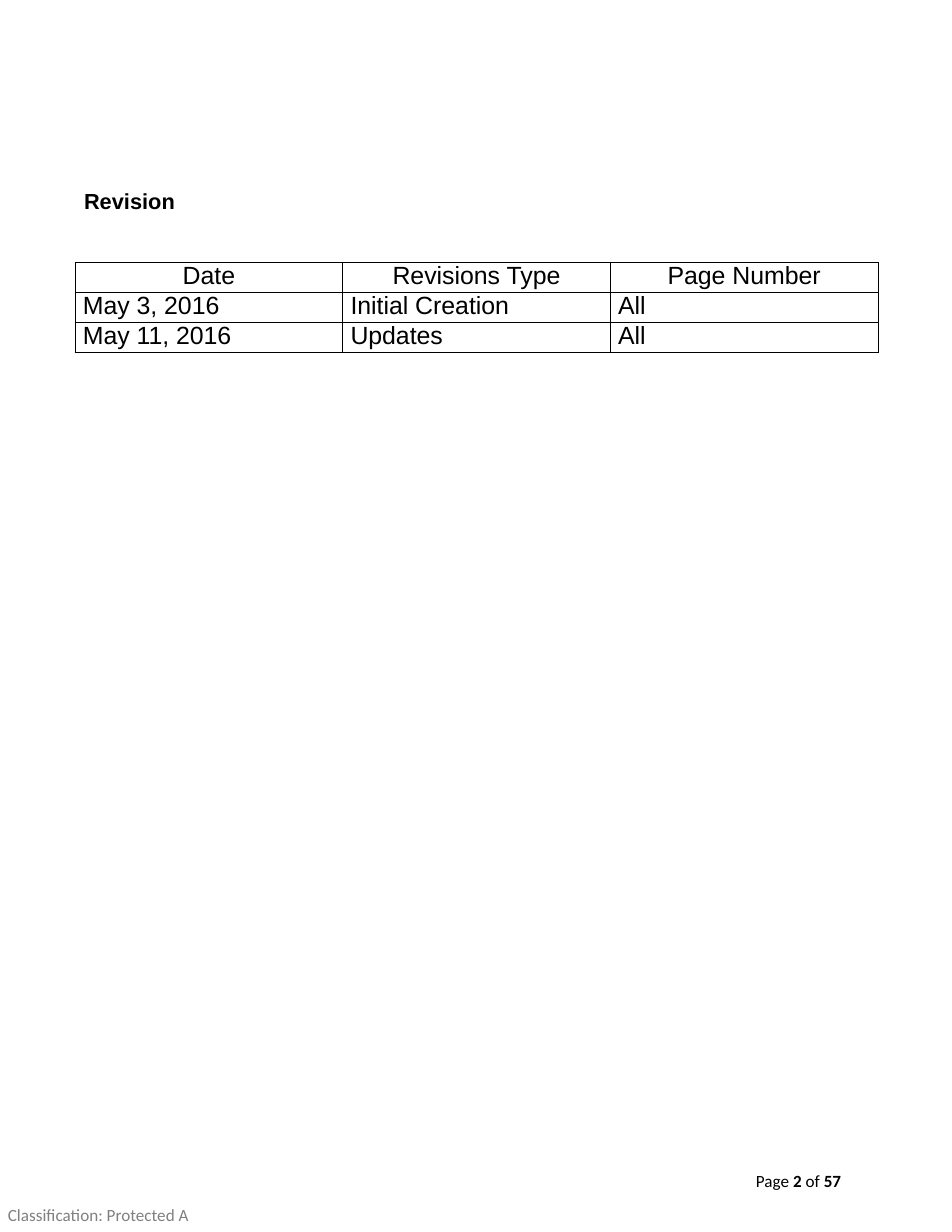
from lxml.etree import SubElement as Sub
from pptx import Presentation
from pptx.dml.color import RGBColor
from pptx.enum.text import MSO_ANCHOR as Anchor, MSO_AUTO_SIZE as Auto, PP_ALIGN as Align
from pptx.oxml.ns import qn
from pptx.util import Inches, Pt


def style(font, size, name, color="000000", bold=False):
    font.size = Pt(size)
    font.name = name
    font.bold = bold
    font.color.rgb = RGBColor.from_string(color)


def setup(box, left, top, width, height):
    box.left, box.top = Inches(left), Inches(top)
    box.width, box.height = Inches(width), Inches(height)
    frame = box.text_frame
    frame.margin_left = frame.margin_right = 0
    frame.margin_top = frame.margin_bottom = 0
    frame.vertical_anchor = Anchor.TOP
    frame.word_wrap = False
    frame.auto_size = Auto.NONE
    para = frame.paragraphs[0]
    para.alignment = Align.LEFT
    return para


deck = Presentation()
deck.slide_width, deck.slide_height = Inches(8.5), Inches(11)
slide = deck.slides.add_slide(deck.slide_layouts[5])
shapes = slide.shapes

title = setup(shapes.title, 0.75, 1.68, 0.84, 0.22)
title.text = "Revision"
style(title.font, 14, "Arial", bold=True)

label = setup(shapes.add_textbox(0, 0, 0, 0), 0.07, 10.75, 1.65, 0.18)
label.text = "Classification: Protected A"
style(label.font, 11, "Calibri", "808080")

page = setup(shapes.add_textbox(0, 0, 0, 0), 6.75, 10.45, 0.87, 0.18)
for text, bold in [("Page ", False), ("2", True), (" of ", False), ("57", True)]:
    run = page.add_run()
    run.text = text
    style(run.font, 11, "Calibri", bold=bold)

rows = [
    ("Date", "Revisions Type", "Page Number"),
    ("May 3, 2016", "Initial Creation", "All"),
    ("May 11, 2016", "Updates", "All"),
]
wide, high = 2.39, 0.27
table = shapes.add_table(
    len(rows), 3, Inches(0.67), Inches(2.34), Inches(3 * wide), Inches(len(rows) * high)
).table
for col in table.columns:
    col.width = Inches(wide)
for r, row in enumerate(rows):
    table.rows[r].height = Inches(high)
    for c, text in enumerate(row):
        cell = table.cell(r, c)
        cell.margin_left = Inches(0.07 if r else 0)
        cell.margin_right = cell.margin_top = cell.margin_bottom = 0
        para = cell.text_frame.paragraphs[0]
        para.text = text
        para.alignment = Align.LEFT if r else Align.CENTER
        style(para.font, 16, "Arial")
        props = cell._tc.get_or_add_tcPr()
        for side in ("a:lnL", "a:lnR", "a:lnT", "a:lnB"):
            line = Sub(props, qn(side), w=str(Pt(0.48)))
            Sub(Sub(line, qn("a:solidFill")), qn("a:srgbClr"), val="000000")
        cell.fill.background()

deck.save("out.pptx")
